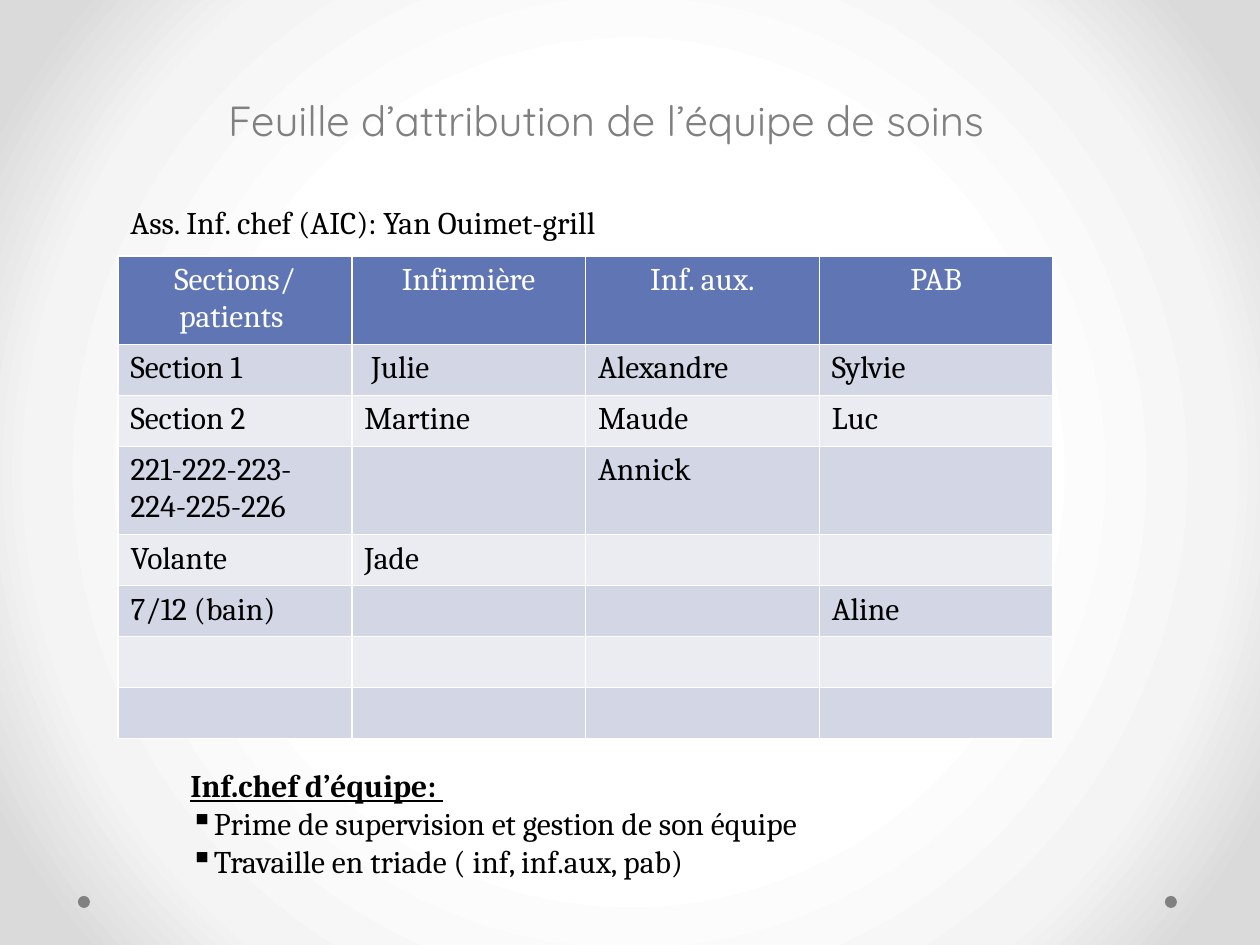
from lxml import etree
from pptx import Presentation
from pptx.dml.color import RGBColor
from pptx.enum.shapes import MSO_SHAPE
from pptx.enum.text import PP_ALIGN
from pptx.oxml import parse_xml
from pptx.oxml.ns import nsdecls, qn
from pptx.util import Emu, Pt

PX = 914400 // 126
OVAL = MSO_SHAPE.OVAL
CENTER, LEFT = PP_ALIGN.CENTER, PP_ALIGN.LEFT

WHITE = RGBColor(0xFF, 0xFF, 0xFF)
BLACK = RGBColor(0x00, 0x00, 0x00)
GREY = RGBColor(0x80, 0x80, 0x80)
HEADER_BLUE = RGBColor(0x60, 0x76, 0xB4)
BAND_DARK = RGBColor(0xD2, 0xD6, 0xE5)
BAND_LIGHT = RGBColor(0xEA, 0xEC, 0xF2)
BACKGROUND_STOPS = [
    (50, WHITE),
    (76, RGBColor(0xF4, 0xF4, 0xF4)),
    (92, RGBColor(0xDA, 0xDA, 0xDA)),
]

TITLE_FONT, BODY_FONT = "Quicksand", "Cambria"
ROWS = [
    ["Sections/ patients ", "Infirmière", "Inf. aux.", "PAB"],
    ["Section 1", " Julie", "Alexandre", "Sylvie"],
    ["Section 2", "Martine", "Maude", "Luc"],
    ["221-222-223-224-225-226", "", "Annick", ""],
    ["Volante", "Jade", "", ""],
    ["7/12 (bain)", "", "", "Aline"],
    [""] * 4,
    [""] * 4,
]
ROW_HEIGHT, TALL_ROW_HEIGHT = 51, 85
TALL_ROWS = (0, 3)
DUTIES = [
    "Prime de supervision et gestion de son équipe",
    "Travaille en triade ( inf, inf.aux, pab)",
]


def px(*lengths):
    return [Emu(length * PX) for length in lengths]


def add_run(paragraph, text, color=BLACK, size=18, font=BODY_FONT):
    run = paragraph.add_run()
    run.text = text
    run.font.name = font
    run.font.size = Pt(size)
    run.font.color.rgb = color
    return run


def add_text_frame(slide, box):
    frame = slide.shapes.add_textbox(*px(*box)).text_frame
    frame.word_wrap = True
    return frame


def paint_background(slide):
    """Fill the slide with a gradient in circles around its centre."""
    fill = slide.background.fill
    fill.gradient()
    stops = "".join(
        f'<a:gs pos="{position * 1000}"><a:srgbClr val="{color}"/></a:gs>'
        for position, color in BACKGROUND_STOPS
    )
    gradient = parse_xml(
        f'<a:gradFill {nsdecls("a")} rotWithShape="1"><a:gsLst>{stops}</a:gsLst>'
        '<a:path path="circle"><a:fillToRect l="50000" t="50000" r="50000" b="50000"/>'
        "</a:path></a:gradFill>"
    )
    properties = slide.background._cSld.bg.bgPr
    properties.replace(properties.find(qn("a:gradFill")), gradient)


def add_corner_dot(slide, box):
    dot = slide.shapes.add_shape(OVAL, *px(*box))
    dot.shadow.inherit = False
    dot.fill.solid()
    dot.fill.fore_color.rgb = GREY
    dot.line.fill.background()


def add_title(slide, box):
    paragraph = add_text_frame(slide, box).paragraphs[0]
    paragraph.alignment = CENTER
    add_run(paragraph, "Feuille d’attribution de l’équipe de soins", GREY, 24, TITLE_FONT)


def add_head_nurse(slide, box):
    paragraph = add_text_frame(slide, box).paragraphs[0]
    add_run(paragraph, "Ass. Inf. chef (AIC): Yan Ouimet-grill")


def add_borders(cell):
    properties = cell._tc.get_or_add_tcPr()
    for side in ("lnL", "lnR", "lnT", "lnB"):
        line = etree.SubElement(properties, qn(f"a:{side}"), w=str(Pt(1)))
        solid = etree.SubElement(line, qn("a:solidFill"))
        etree.SubElement(solid, qn("a:srgbClr"), val=str(WHITE))


def fill_cell(cell, text, row_index):
    is_header = row_index == 0
    add_borders(cell)
    cell.fill.solid()
    band = BAND_DARK if row_index % 2 else BAND_LIGHT
    cell.fill.fore_color.rgb = HEADER_BLUE if is_header else band
    paragraph = cell.text_frame.paragraphs[0]
    paragraph.alignment = CENTER if is_header else LEFT
    if text:
        run = add_run(paragraph, text, WHITE if is_header else BLACK)
        run.font.bold = False
    else:
        paragraph.font.size = Pt(18)


def add_assignment_table(slide, box):
    table = slide.shapes.add_table(len(ROWS), len(ROWS[0]), *px(*box)).table
    for row_index, texts in enumerate(ROWS):
        height = TALL_ROW_HEIGHT if row_index in TALL_ROWS else ROW_HEIGHT
        table.rows[row_index].height = Emu(height * PX)
        for column_index, text in enumerate(texts):
            fill_cell(table.cell(row_index, column_index), text, row_index)


def add_team_leader_duties(slide, box):
    frame = add_text_frame(slide, box)
    heading = add_run(frame.paragraphs[0], "Inf.chef d’équipe: ")
    heading.font.bold = True
    heading.font.underline = True
    for duty in DUTIES:
        paragraph = frame.add_paragraph()
        properties = paragraph._p.get_or_add_pPr()
        etree.SubElement(properties, qn("a:buChar"), char="▪")
        add_run(paragraph, duty)


def main():
    presentation = Presentation()
    presentation.slide_width, presentation.slide_height = px(1260, 945)
    slide = presentation.slides.add_slide(presentation.slide_layouts[6])
    paint_background(slide)
    for left in (1165, 78):
        add_corner_dot(slide, (left, 896, 12, 12))
    add_title(slide, (39, 88, 1134, 596))
    add_assignment_table(slide, (118, 256, 935, 476))
    add_head_nurse(slide, (118, 197, 660, 50))
    add_team_leader_duties(slide, (178, 760, 709, 127))
    presentation.save("out.pptx")


if __name__ == "__main__":
    main()
